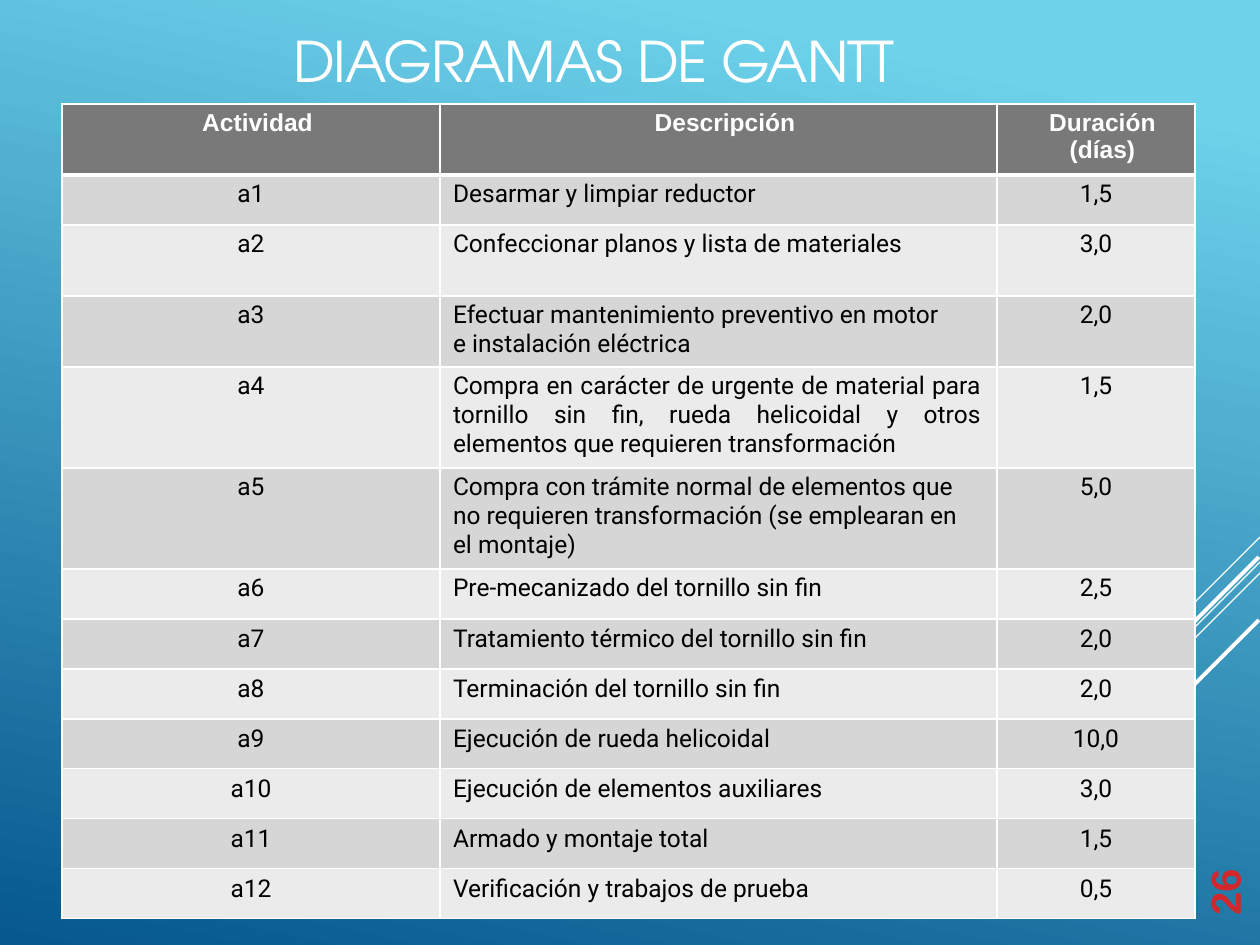
"""Build a slide with a table of project tasks and their durations."""
from dataclasses import dataclass

from lxml import etree
from pptx import Presentation
from pptx import util as u
from pptx.dml.color import RGBColor
from pptx.enum import shapes, text
from pptx.oxml import ns

ROWS = [
    ("a1", "Desarmar y limpiar reductor", "1,5"),
    ("a2", "Confeccionar planos y lista de materiales", "3,0"),
    ("a3", "Efectuar mantenimiento preventivo en motor e instalación eléctrica", "2,0"),
    ("a4", "Compra en carácter de urgente de material para tornillo sin fin, "
           "rueda helicoidal y otros elementos que requieren transformación", "1,5"),
    ("a5", "Compra con trámite normal de elementos que no requieren "
           "transformación (se emplearan en el montaje)", "5,0"),
    ("a6", "Pre-mecanizado del tornillo sin fin", "2,5"),
    ("a7", "Tratamiento térmico del tornillo sin fin", "2,0"),
    ("a8", "Terminación del tornillo sin fin", "2,0"),
    ("a9", "Ejecución de rueda helicoidal", "10,0"),
    ("a10", "Ejecución de elementos auxiliares", "3,0"),
    ("a11", "Armado y montaje total", "1,5"),
    ("a12", "Verificación y trabajos de prueba", "0,5"),
]
HEADS = ("Actividad", "Descripción", "Duración\n(días)")
WIDTHS = (378, 557, 198)
TALL = {0: 71, 2: 71, 3: 71, 4: 101, 5: 101}
RIGHT = {3: 50, 4: 16, 5: 20}
RAYS = [(1260, 537, 104, 0.75), (1260, 562, 340, 0.75), (1260, 573, 217, 0.75),
        (1259, 557, 198, 2.25), (1259, 620, 144, 2.25)]
LEFT, MID, FULL = text.PP_ALIGN.LEFT, text.PP_ALIGN.CENTER, text.PP_ALIGN.JUSTIFY


@dataclass(frozen=True)
class Theme:
    """Hold the colours, fonts and type sizes."""
    sky: str = "6ED2EB"
    sea: str = "06588E"
    white: str = "FFFFFF"
    ink: str = "000000"
    red: str = "D1282D"
    head: str = "797979"
    bands: tuple = ("EBEBEB", "D6D6D6")
    title: str = "TeX Gyre Adventor"
    bold: str = "Arial"
    body: str = "Roboto"
    big: int = 32
    page: int = 24
    small: int = 14


def px(n):
    """Turn pixels into EMU."""
    return u.Emu(round(n * 914400 / 126))


def rgb(code):
    """Turn a hex code into a colour."""
    return RGBColor.from_string(code)


def write(frame, words, font, size, color, bold=False, align=LEFT,
          before=0, line=None, track=0):
    """Write text into a frame, one paragraph a line."""
    for i, part in enumerate(words.split("\n")):
        para = frame.add_paragraph() if i else frame.paragraphs[0]
        para.alignment = align
        para.space_before = u.Pt(0 if i else before)
        if line:
            para.line_spacing = u.Pt(line)
        run = para.add_run()
        run.text = part
        run.font.name, run.font.size, run.font.bold = font, u.Pt(size), bold
        run.font.color.rgb = rgb(color)
        if track:
            run.font._element.set("spc", str(track))


class Deck:
    """Hold the theme and the current slide."""

    def __init__(self, theme):
        """Start a file with one blank slide."""
        self.theme = theme
        self.file = Presentation()
        self.file.slide_width, self.file.slide_height = px(1260), px(945)
        self.slide = self.file.slides.add_slide(self.file.slide_layouts[6])

    def back(self):
        """Paint the background gradient."""
        fill = self.slide.background.fill
        fill.gradient()
        fill.gradient_angle = 258
        ends = ((0.1, self.theme.sky), (1, self.theme.sea))
        for stop, (place, color) in zip(fill.gradient_stops, ends):
            stop.position, stop.color.rgb = place, rgb(color)

    def ray(self, x, y, size, width):
        """Draw a diagonal line down to the left."""
        line = self.slide.shapes.add_connector(
            shapes.MSO_CONNECTOR.STRAIGHT, px(x), px(y), px(x - size), px(y + size))
        line.line.color.rgb = rgb(self.theme.white)
        line.line.width = u.Pt(width)
        etree.SubElement(line._element.spPr, ns.qn("a:effectLst"))

    def label(self, box, words, turn=None, **style):
        """Add a text box without margins."""
        frame = self.slide.shapes.add_textbox(*map(px, box)).text_frame
        frame.word_wrap = True
        frame.margin_left = frame.margin_right = 0
        frame.margin_top = frame.margin_bottom = 0
        if turn:
            frame._txBody.bodyPr.set("vert", turn)
        else:
            frame.vertical_anchor = text.MSO_ANCHOR.MIDDLE
        write(frame, words, **style)

    def edge(self, cell, **widths):
        """Draw the four borders of a cell."""
        props = cell._tc.get_or_add_tcPr()
        for side in "LRTB":
            line = etree.SubElement(props, ns.qn("a:ln" + side),
                                    w=str(u.Pt(widths.get(side, 1))))
            fill = etree.SubElement(line, ns.qn("a:solidFill"))
            etree.SubElement(fill, ns.qn("a:srgbClr"), val=self.theme.white)

    def table(self, x, y, rows):
        """Add the table of tasks."""
        look = self.theme
        tall = [TALL.get(i, 50) for i in range(len(rows))]
        grid = self.slide.shapes.add_table(
            len(rows), len(WIDTHS), px(x), px(y), px(sum(WIDTHS)), px(sum(tall))).table
        grid.horz_banding = False
        for col, width in zip(grid.columns, WIDTHS):
            col.width = px(width)
        for i, row in enumerate(rows):
            grid.rows[i].height = px(tall[i])
            for j, words in enumerate(row):
                self.cell(grid.cell(i, j), i, j, words, look)

    def cell(self, cell, i, j, words, look):
        """Fill and format one table cell."""
        top = i == 0
        cell.margin_left = px(13 if top or j == 1 else 0)
        cell.margin_right = px(RIGHT.get(i, 0) if j == 1 else 0)
        cell.margin_top, cell.margin_bottom = px(5 if i < 7 else 6), 0
        self.edge(cell, T=3 if i == 1 else 1, B=3 if top else 1)
        cell.fill.solid()
        cell.fill.fore_color.rgb = rgb(look.head if top else look.bands[i % 2])
        side = FULL if i == 4 else LEFT
        write(cell.text_frame, words, look.bold if top else look.body, look.small,
              look.white if top else look.ink, bold=top,
              align=side if j == 1 and not top else MID, before=3.2)


def main():
    """Build and save the slide."""
    look = Theme()
    deck = Deck(look)
    deck.back()
    for ray in RAYS:
        deck.ray(*ray)
    deck.label((293, 29, 614, 62), "DIAGRAMAS DE GANTT", font=look.title,
               size=look.big, color=look.white, before=0.9, track=-60)
    deck.table(62, 104, [HEADS, *ROWS])
    deck.label((1201, 866, 50, 50), "26", turn="vert270", font=look.bold,
               size=look.page, color=look.red, bold=True, line=27.6, track=-10)
    deck.file.save("out.pptx")


if __name__ == "__main__":
    main()
